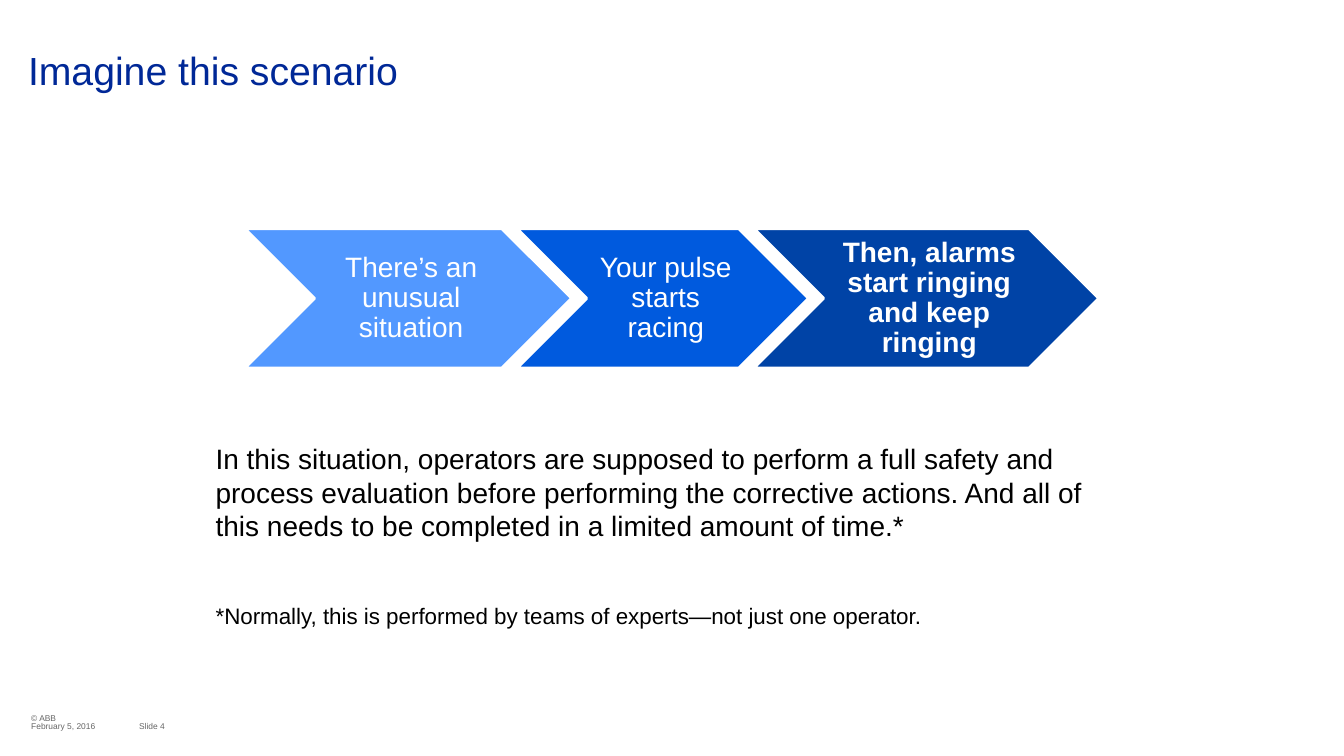
from pptx import Presentation
from pptx.dml.color import RGBColor
from pptx.enum import shapes, text
from pptx.util import Pt

TITLE = "Imagine this scenario"
STEPS = [  # text, width, fill, bold
    ("There’s an unusual situation", 233.3, "5298FF", False),
    ("Your pulse starts racing", 208.1, "005ADE", False),
    ("Then, alarms start ringing and keep ringing", 246.2, "0043A6", True),
]
BODY = [  # text, size, space before
    ("In this situation, operators are supposed to perform a full safety and "
     "process evaluation before performing the corrective actions. And all of "
     "this needs to be completed in a limited amount of time.*", 20, 0),
    ("*Normally, this is performed by teams of experts—not just one operator.", 16, 43),
]
FOOTER = [  # text, left, top, width
    ("© ABB", 22.3, 509, 117),
    ("February 5, 2016", 22.3, 515, 76),
    ("Slide 4", 99.4, 515, 50),
]
STEP_LEFT, STEP_TOP, STEP_HEIGHT, STEP_OVERLAP = 175, 163.4, 99.4, 38.9


def rgb(color):
    return RGBColor.from_string(color)


def set_frame(tf, insets=(0, 0, 0, 0), anchor=text.MSO_ANCHOR.TOP):
    """Set wrapping, anchor and insets (left, top, right, bottom)."""
    tf.word_wrap = True
    tf.auto_size = text.MSO_AUTO_SIZE.NONE
    tf.vertical_anchor = anchor
    tf.margin_left, tf.margin_top, tf.margin_right, tf.margin_bottom = map(Pt, insets)


def set_paragraph(p, words, size, color, bold=False,
                  align=text.PP_ALIGN.LEFT, spacing=1.0, before=0):
    p.text = words
    p.alignment = align
    p.line_spacing = spacing
    p.space_before = Pt(before)
    p.font.name = "Arial"
    p.font.size = Pt(size)
    p.font.bold = bold
    p.font.color.rgb = rgb(color)


def add_box(slide, left, top, width, height, **frame):
    box = slide.shapes.add_textbox(Pt(left), Pt(top), Pt(width), Pt(height))
    set_frame(box.text_frame, **frame)
    return box.text_frame


def add_step(slide, left, words, width, fill, bold):
    sp = slide.shapes.add_shape(shapes.MSO_SHAPE.CHEVRON, Pt(left), Pt(STEP_TOP),
                                Pt(width), Pt(STEP_HEIGHT))
    sp.shadow.inherit = False
    sp.fill.solid()
    sp.fill.fore_color.rgb = rgb(fill)
    sp.line.color.rgb = rgb("FFFFFF")
    sp.line.width = Pt(2)
    set_frame(sp.text_frame, (6.3, 2.1, 2.1, 2.1), text.MSO_ANCHOR.MIDDLE)
    set_paragraph(sp.text_frame.paragraphs[0], words, 20, "FFFFFF", bold,
                  text.PP_ALIGN.CENTER, 0.9)


def main():
    prs = Presentation()
    prs.slide_width, prs.slide_height = Pt(960), Pt(540)
    slide = prs.slides.add_slide(prs.slide_layouts[5])

    title = slide.shapes.title
    title.left, title.top, title.width, title.height = Pt(0), Pt(0), Pt(960), Pt(128)
    set_frame(title.text_frame, (20, 36.7, 20, 0))
    set_paragraph(title.text_frame.paragraphs[0], TITLE, 28, "002897", spacing=0.9)

    left = STEP_LEFT
    for words, width, fill, bold in STEPS:
        add_step(slide, left, words, width, fill, bold)
        left += width - STEP_OVERLAP

    tf = add_box(slide, 154, 315.4, 651, 170)
    for i, (words, size, before) in enumerate(BODY):
        p = tf.add_paragraph() if i else tf.paragraphs[0]
        set_paragraph(p, words, size, "000000", before=before)

    for words, left, top, width in FOOTER:
        tf = add_box(slide, left, top, width, 8, anchor=text.MSO_ANCHOR.MIDDLE)
        set_paragraph(tf.paragraphs[0], words, 6, "666666")

    prs.save("out.pptx")


if __name__ == "__main__":
    main()
